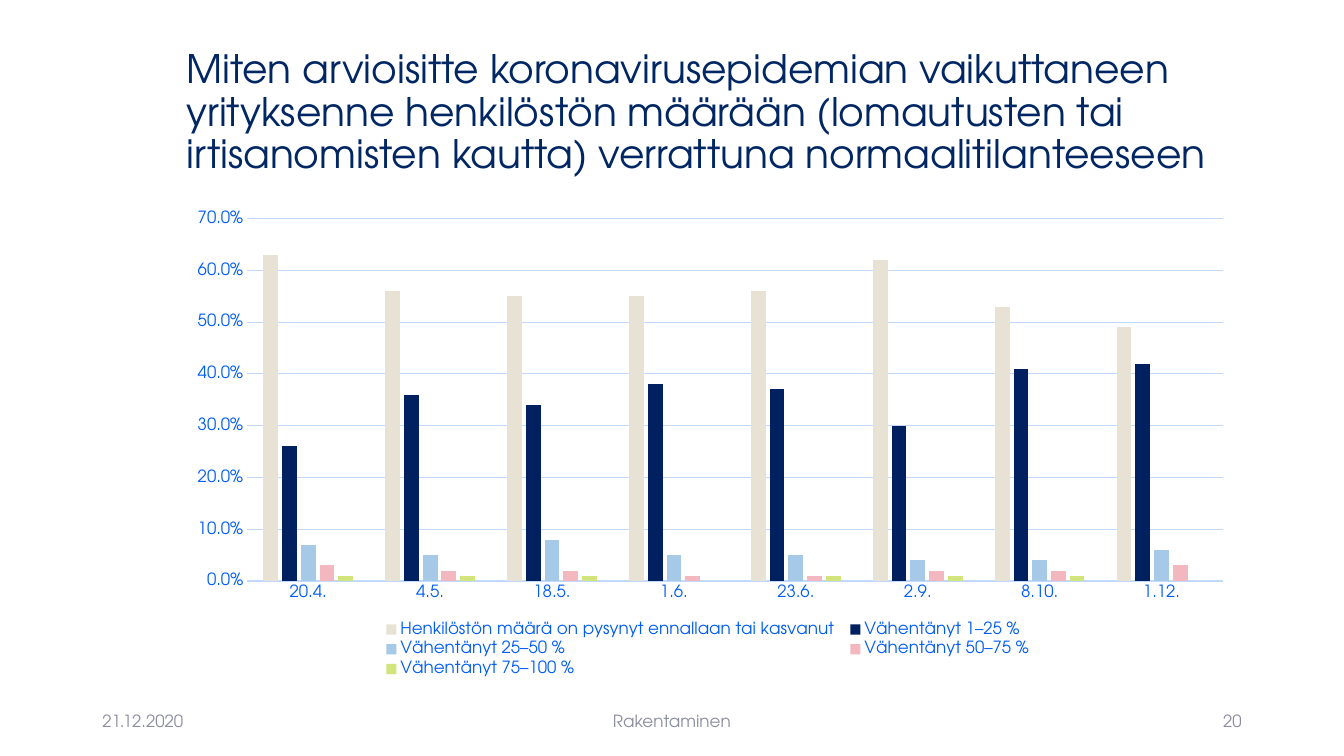
from pptx import Presentation
from pptx.chart.data import CategoryChartData
from pptx.dml.color import RGBColor
from pptx.enum.chart import XL_CHART_TYPE, XL_LEGEND_POSITION, XL_TICK_MARK
from pptx.enum.text import MSO_ANCHOR, PP_ALIGN
from pptx.util import Pt

FONT = "TeX Gyre Adventor"
NAVY = RGBColor(0x00, 0x26, 0x63)
BLUE = RGBColor(0x00, 0x5D, 0xF3)
PALE_BLUE = RGBColor(0xC1, 0xD9, 0xFF)
GREY = RGBColor(0x8C, 0x8E, 0x9F)

TITLE = ("Miten arvioisitte koronavirusepidemian vaikuttaneen yrityksenne "
         "henkilöstön määrään (lomautusten tai irtisanomisten kautta) "
         "verrattuna normaalitilanteeseen")
DATES = ["20.4.", "4.5.", "18.5.", "1.6.", "23.6.", "2.9.", "8.10.", "1.12."]

# Series name, colour, share of answers on each date
STAFF_CHANGES = [
    ("Henkilöstön määrä on pysynyt ennallaan tai kasvanut ", RGBColor(0xE8, 0xE2, 0xD5),
     [0.63, 0.56, 0.55, 0.55, 0.56, 0.62, 0.53, 0.49]),
    ("Vähentänyt 1–25 %", RGBColor(0x00, 0x20, 0x60),
     [0.26, 0.36, 0.34, 0.38, 0.37, 0.3, 0.41, 0.42]),
    ("Vähentänyt 25–50 % ", RGBColor(0xA5, 0xC9, 0xE7),
     [0.07, 0.05, 0.08, 0.05, 0.05, 0.04, 0.04, 0.06]),
    ("Vähentänyt 50–75 % ", RGBColor(0xF2, 0xB7, 0xBF),
     [0.03, 0.02, 0.02, 0.01, 0.01, 0.02, 0.02, 0.03]),
    ("Vähentänyt 75–100 % ", RGBColor(0xD1, 0xE5, 0x7C),
     [0.01, 0.01, 0.01, 0, 0.01, 0.01, 0.01, 0]),
]


def style_font(font, size, color):
    font.name = FONT
    font.size = Pt(size)
    font.color.rgb = color


def add_text(page, text, left, top, width, height, size, color,
             align=PP_ALIGN.LEFT, line_spacing=1.0):
    box = page.shapes.add_textbox(Pt(left), Pt(top), Pt(width), Pt(height))
    frame = box.text_frame
    frame.word_wrap = True
    frame.vertical_anchor = MSO_ANCHOR.MIDDLE
    frame.text = text
    paragraph = frame.paragraphs[0]
    paragraph.alignment = align
    paragraph.line_spacing = line_spacing
    style_font(paragraph.runs[0].font, size, color)


def style_axis(axis):
    axis.major_tick_mark = XL_TICK_MARK.NONE
    axis.minor_tick_mark = XL_TICK_MARK.NONE
    style_font(axis.tick_labels.font, 12, BLUE)


def style_line(line):
    line.color.rgb = PALE_BLUE
    line.width = Pt(0.75)


def add_staff_chart(page, left, top, width, height):
    data = CategoryChartData(number_format="0.0%")
    data.categories = DATES
    for name, _, shares in STAFF_CHANGES:
        data.add_series(name, shares)
    chart = page.shapes.add_chart(XL_CHART_TYPE.COLUMN_CLUSTERED, Pt(left), Pt(top),
                                  Pt(width), Pt(height), data).chart
    chart.has_title = False
    style_font(chart.font, 10, NAVY)

    # Columns
    plot = chart.plots[0]
    plot.vary_by_categories = False
    plot.gap_width = 219
    plot.overlap = -27
    for series, (_, color, _) in zip(plot.series, STAFF_CHANGES):
        series.invert_if_negative = False
        series.format.fill.solid()
        series.format.fill.fore_color.rgb = color

    # Axes
    dates, shares = chart.category_axis, chart.value_axis
    style_axis(dates)
    style_line(dates.format.line)
    style_axis(shares)
    shares.format.line.fill.background()
    shares.minimum_scale, shares.maximum_scale, shares.major_unit = 0, 0.7, 0.1
    shares.tick_labels.number_format = "0.0%"
    shares.tick_labels.number_format_is_linked = False
    style_line(shares.major_gridlines.format.line)

    # Legend
    chart.has_legend = True
    chart.legend.position = XL_LEGEND_POSITION.BOTTOM
    chart.legend.include_in_layout = False
    style_font(chart.legend.font, 12, BLUE)


def main():
    deck = Presentation()
    deck.slide_width, deck.slide_height = Pt(960), Pt(540)
    page = deck.slides.add_slide(deck.slide_layouts[6])

    # Title and chart
    add_text(page, TITLE, 126, 28.8, 762.5, 104.4, 28, NAVY, line_spacing=0.9)
    add_staff_chart(page, 126, 143.7, 762.5, 342.7)

    # Footer
    for text, left, width, align in [("21.12.2020", 66, 216, PP_ALIGN.LEFT),
                                     ("Rakentaminen", 318, 324, PP_ALIGN.CENTER),
                                     ("20", 678, 216, PP_ALIGN.RIGHT)]:
        add_text(page, text, left, 500.5, width, 28.75, 12, GREY, align)

    deck.save("out.pptx")


if __name__ == "__main__":
    main()
